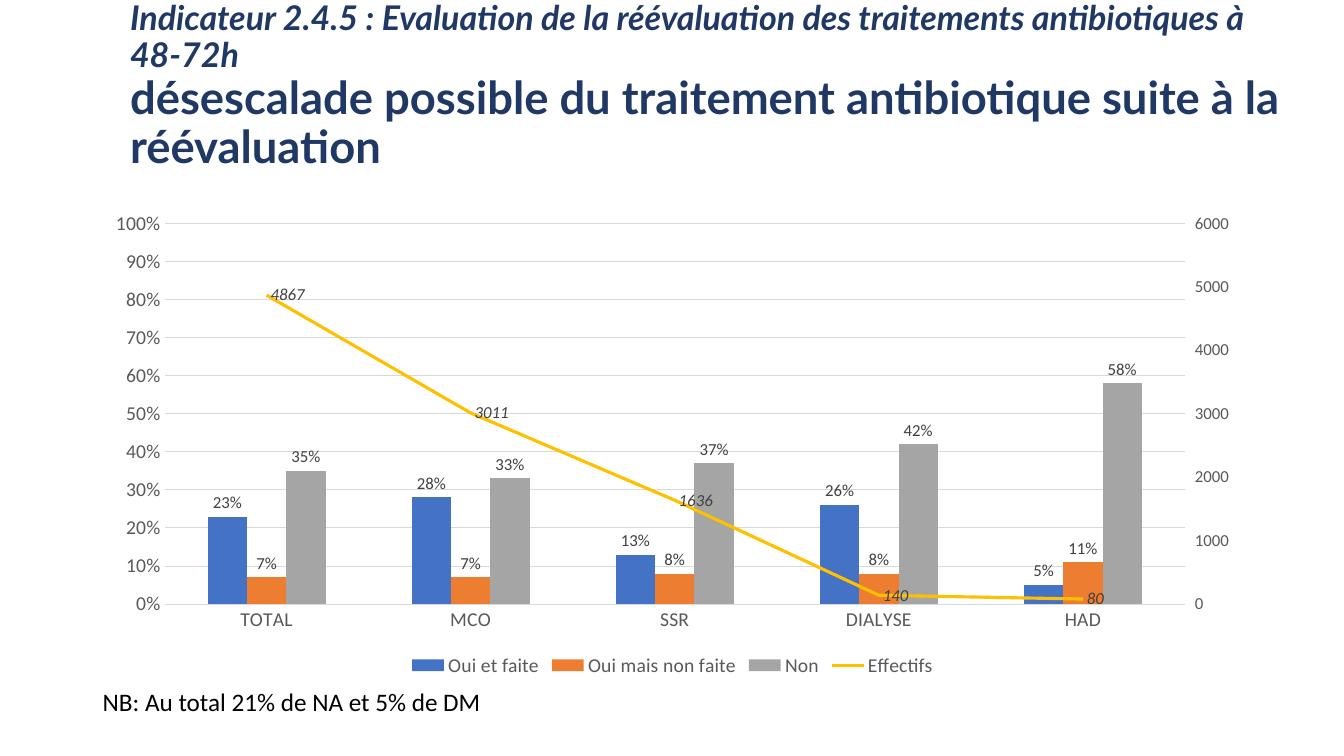
from pptx import Presentation
from pptx.chart.data import CategoryChartData
from pptx.dml.color import RGBColor
from pptx.enum.chart import (XL_CHART_TYPE, XL_LABEL_POSITION,
                             XL_LEGEND_POSITION, XL_TICK_MARK)
from pptx.enum.text import MSO_ANCHOR, MSO_AUTO_SIZE, PP_ALIGN
from pptx.oxml import parse_xml
from pptx.oxml.ns import nsdecls, qn
from pptx.util import Inches, Pt

NAVY = RGBColor(0x20, 0x38, 0x64)
BLACK = RGBColor(0x00, 0x00, 0x00)
GREY_TEXT = RGBColor(0x59, 0x59, 0x59)
LABEL_TEXT = RGBColor(0x40, 0x40, 0x40)
GRID = RGBColor(0xD9, 0xD9, 0xD9)
BLUE = RGBColor(0x44, 0x72, 0xC4)
ORANGE = RGBColor(0xED, 0x7D, 0x31)
GREY = RGBColor(0xA5, 0xA5, 0xA5)
YELLOW = RGBColor(0xFF, 0xC0, 0x00)

CATEGORIES = ["TOTAL", "MCO", "SSR", "DIALYSE", "HAD"]
ANSWERS = [
    ("Oui et faite", [0.23, 0.28, 0.13, 0.26, 0.05], BLUE),
    ("Oui mais non faite", [0.07, 0.07, 0.08, 0.08, 0.11], ORANGE),
    ("Non", [0.35, 0.33, 0.37, 0.42, 0.58], GREY),
]
HEADCOUNTS = ("Effectifs", [4867, 3011, 1636, 140, 80])

# Line plot and its own pair of axes
LINE_PLOT = f"""<c:lineChart {nsdecls('c')}>
  <c:grouping val="standard"/><c:varyColors val="0"/>
  <c:marker val="1"/><c:axId val="5001"/><c:axId val="5002"/>
</c:lineChart>"""
RIGHT_AXIS = f"""<c:valAx {nsdecls('c', 'a')}>
  <c:axId val="5002"/><c:scaling><c:orientation val="minMax"/></c:scaling>
  <c:delete val="0"/><c:axPos val="r"/>
  <c:numFmt formatCode="General" sourceLinked="0"/>
  <c:majorTickMark val="out"/><c:minorTickMark val="none"/>
  <c:tickLblPos val="nextTo"/>
  <c:spPr><a:ln><a:noFill/></a:ln></c:spPr>
  <c:txPr><a:bodyPr/><a:p><a:pPr><a:defRPr sz="1200">
    <a:solidFill><a:srgbClr val="{GREY_TEXT}"/></a:solidFill>
    <a:latin typeface="Calibri"/></a:defRPr></a:pPr></a:p></c:txPr>
  <c:crossAx val="5001"/><c:crosses val="max"/>
</c:valAx>"""
HIDDEN_AXIS = f"""<c:catAx {nsdecls('c')}>
  <c:axId val="5001"/><c:scaling><c:orientation val="minMax"/></c:scaling>
  <c:delete val="1"/><c:axPos val="b"/>
  <c:crossAx val="5002"/><c:crosses val="autoZero"/>
</c:catAx>"""


def style_font(font, size, color, name="Calibri"):
    font.name = name
    font.size = Pt(size)
    font.color.rgb = color


def place(shape, left, top, width, height):
    shape.left, shape.top = Inches(left), Inches(top)
    shape.width, shape.height = Inches(width), Inches(height)


def fill_title(title):
    place(title, 1.29, 0.14, 11.5, 1.45)
    frame = title.text_frame
    frame.margin_left = frame.margin_right = 0
    frame.margin_top = frame.margin_bottom = 0
    frame.vertical_anchor = MSO_ANCHOR.MIDDLE
    frame.word_wrap = True
    frame.auto_size = MSO_AUTO_SIZE.NONE
    frame.text = ("Indicateur 2.4.5 : Evaluation de la réévaluation des traitements "
                  "antibiotiques à 48-72h")
    paragraph = frame.paragraphs[0]
    paragraph.add_line_break()
    paragraph.add_run().text = ("désescalade possible du traitement antibiotique "
                                "suite à la réévaluation")
    paragraph.alignment = PP_ALIGN.LEFT
    paragraph.line_spacing = 0.9
    for run, size, italic in zip(paragraph.runs, (24.3, 32.4), (True, False)):
        style_font(run.font, size, NAVY, "Lato")
        run.font.bold = True
        run.font.italic = italic


def add_note(slide, text):
    shape = slide.shapes.add_textbox(Inches(0.92), Inches(6.76), Inches(9.45), Inches(0.4))
    frame = shape.text_frame
    frame.word_wrap = True
    frame.text = text
    style_font(frame.paragraphs[0].runs[0].font, 18, BLACK)


def show_labels(series, number_format, position):
    labels = series.data_labels
    labels.show_value = True
    labels.number_format = number_format
    labels.number_format_is_linked = False
    labels.position = position
    style_font(labels.font, 12, LABEL_TEXT)
    return labels


def style_axes(chart):
    for axis in (chart.category_axis, chart.value_axis):
        axis.major_tick_mark = XL_TICK_MARK.NONE
        style_font(axis.tick_labels.font, 14, GREY_TEXT)
    grid = chart.value_axis.major_gridlines.format.line
    for line in (chart.category_axis.format.line, grid):
        line.color.rgb = GRID
        line.width = Pt(0.75)
    axis = chart.value_axis
    axis.minimum_scale, axis.maximum_scale, axis.major_unit = 0, 1, 0.1
    axis.tick_labels.number_format = "0%"
    axis.tick_labels.number_format_is_linked = False
    axis.format.line.fill.background()


def move_to_right_axis(chart, series):
    """Turn a column series into a line read on a second value axis."""
    bar_plot = chart.plots[0]._element
    left_axis = chart.value_axis._element
    element = series._element
    for column_setting in element.findall(qn("c:invertIfNegative")):
        element.remove(column_setting)
    line_plot = parse_xml(LINE_PLOT)
    line_plot.find(qn("c:varyColors")).addnext(element)
    element.find(qn("c:spPr")).addnext(parse_xml(
        f'<c:marker {nsdecls("c")}><c:symbol val="none"/></c:marker>'))
    element.append(parse_xml(f'<c:smooth {nsdecls("c")} val="0"/>'))
    bar_plot.addnext(line_plot)
    left_axis.addnext(parse_xml(HIDDEN_AXIS))
    left_axis.addnext(parse_xml(RIGHT_AXIS))


def add_answer_chart(slide):
    data = CategoryChartData()
    data.categories = CATEGORIES
    for name, values, _ in ANSWERS:
        data.add_series(name, values, "0%")
    data.add_series(*HEADCOUNTS)
    chart = slide.shapes.add_chart(
        XL_CHART_TYPE.COLUMN_CLUSTERED, Inches(0.92), Inches(2),
        Inches(11.5), Inches(4.76), data).chart
    style_font(chart.font, 10, BLACK)
    chart.has_title = False
    chart.has_legend = True
    chart.legend.position = XL_LEGEND_POSITION.BOTTOM
    chart.legend.include_in_layout = False
    style_font(chart.legend.font, 14, GREY_TEXT)
    style_axes(chart)

    # Percentage columns
    plot = chart.plots[0]
    plot.vary_by_categories = False
    plot.gap_width = 219
    plot.overlap = 0
    *columns, headcounts = plot.series
    for series, (_, _, color) in zip(columns, ANSWERS):
        series.format.fill.solid()
        series.format.fill.fore_color.rgb = color
        show_labels(series, "0%", XL_LABEL_POSITION.OUTSIDE_END)

    # Headcount line
    headcounts.format.line.color.rgb = YELLOW
    headcounts.format.line.width = Pt(2.25)
    labels = show_labels(headcounts, "General", XL_LABEL_POSITION.RIGHT)
    labels.font.italic = True
    move_to_right_axis(chart, headcounts)


def main():
    presentation = Presentation()
    presentation.slide_width = Inches(13.33)
    presentation.slide_height = Inches(7.5)
    slide = presentation.slides.add_slide(presentation.slide_layouts[5])
    fill_title(slide.shapes.title)
    add_answer_chart(slide)
    add_note(slide, "NB: Au total 21% de NA et 5% de DM")
    presentation.save("out.pptx")


if __name__ == "__main__":
    main()
